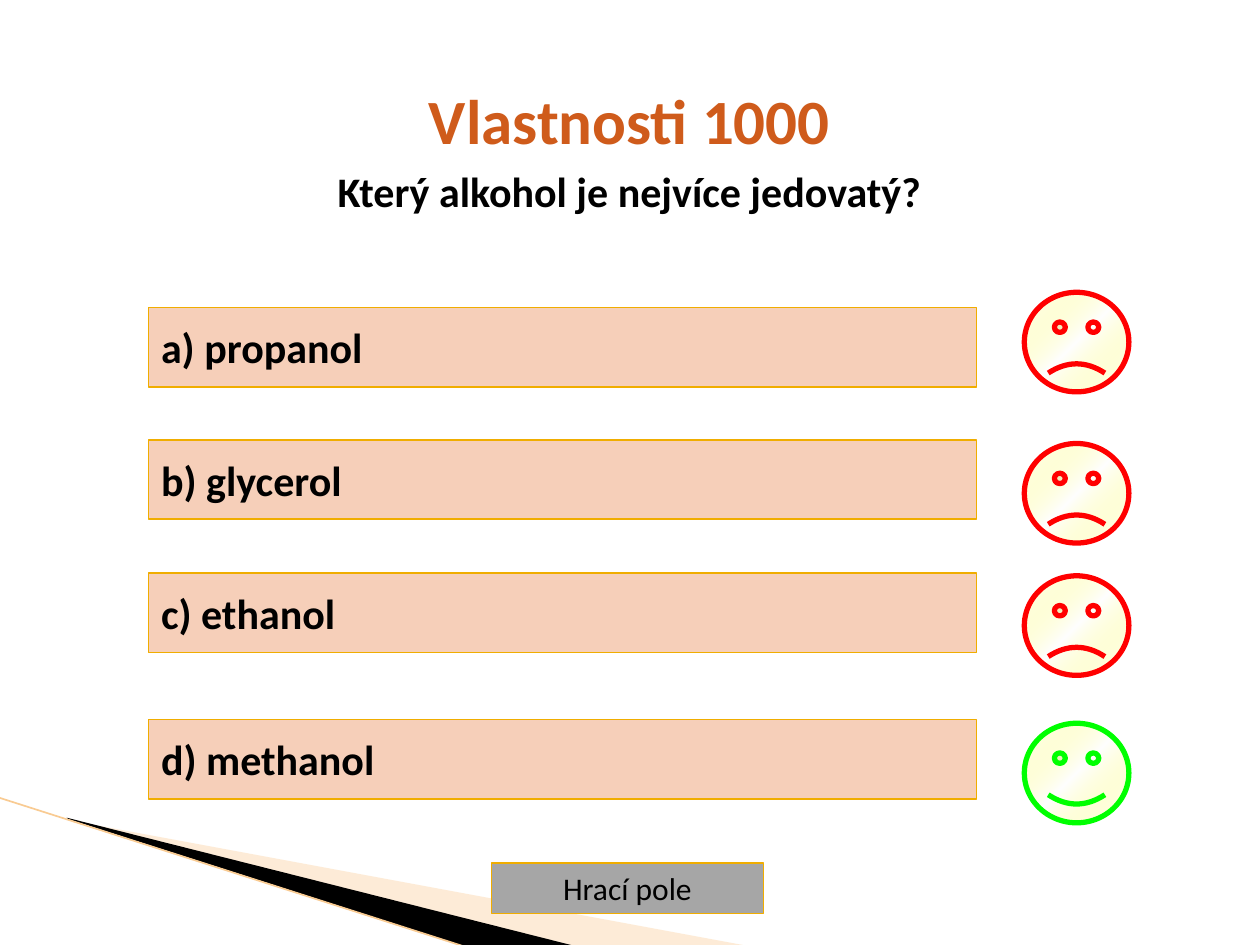
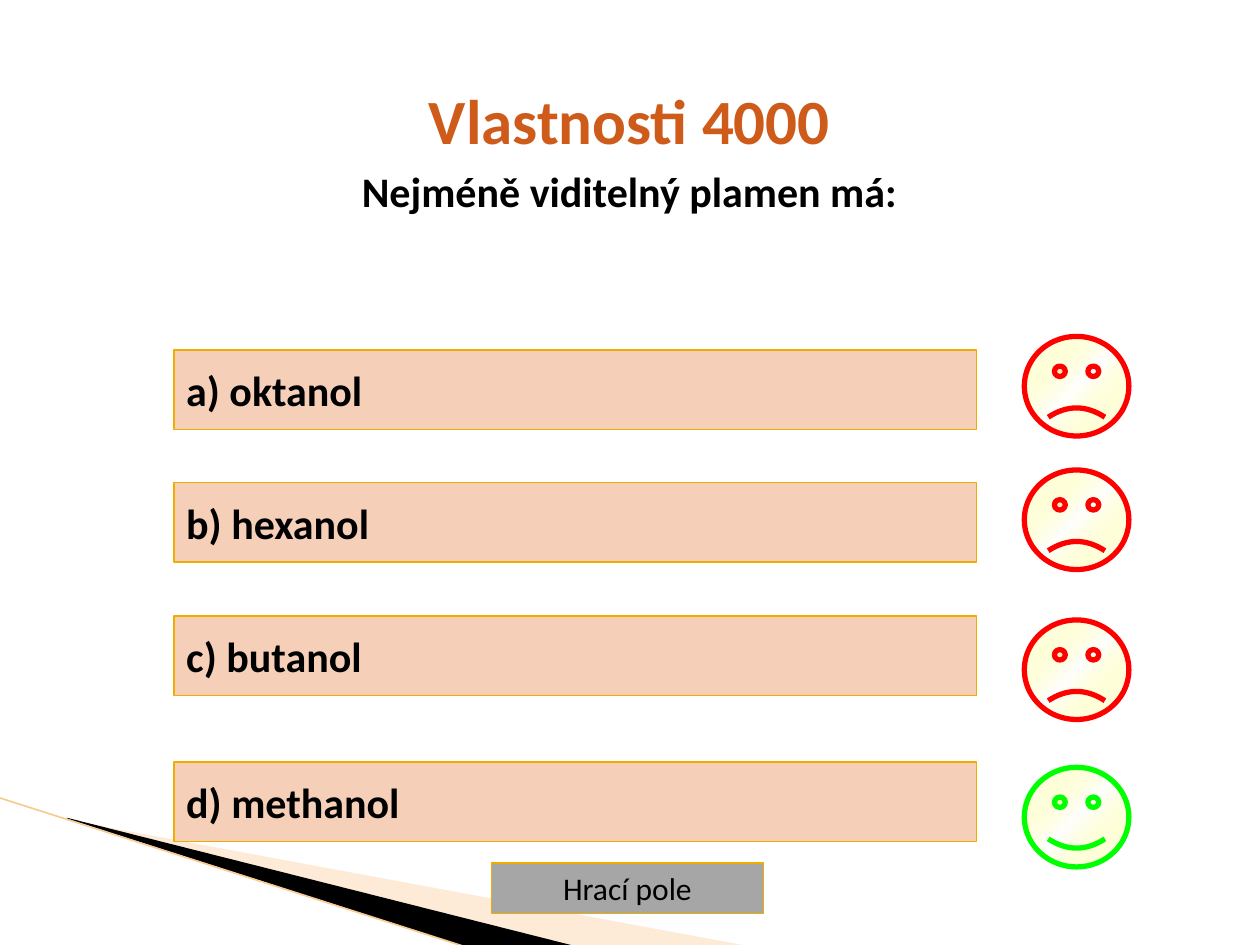
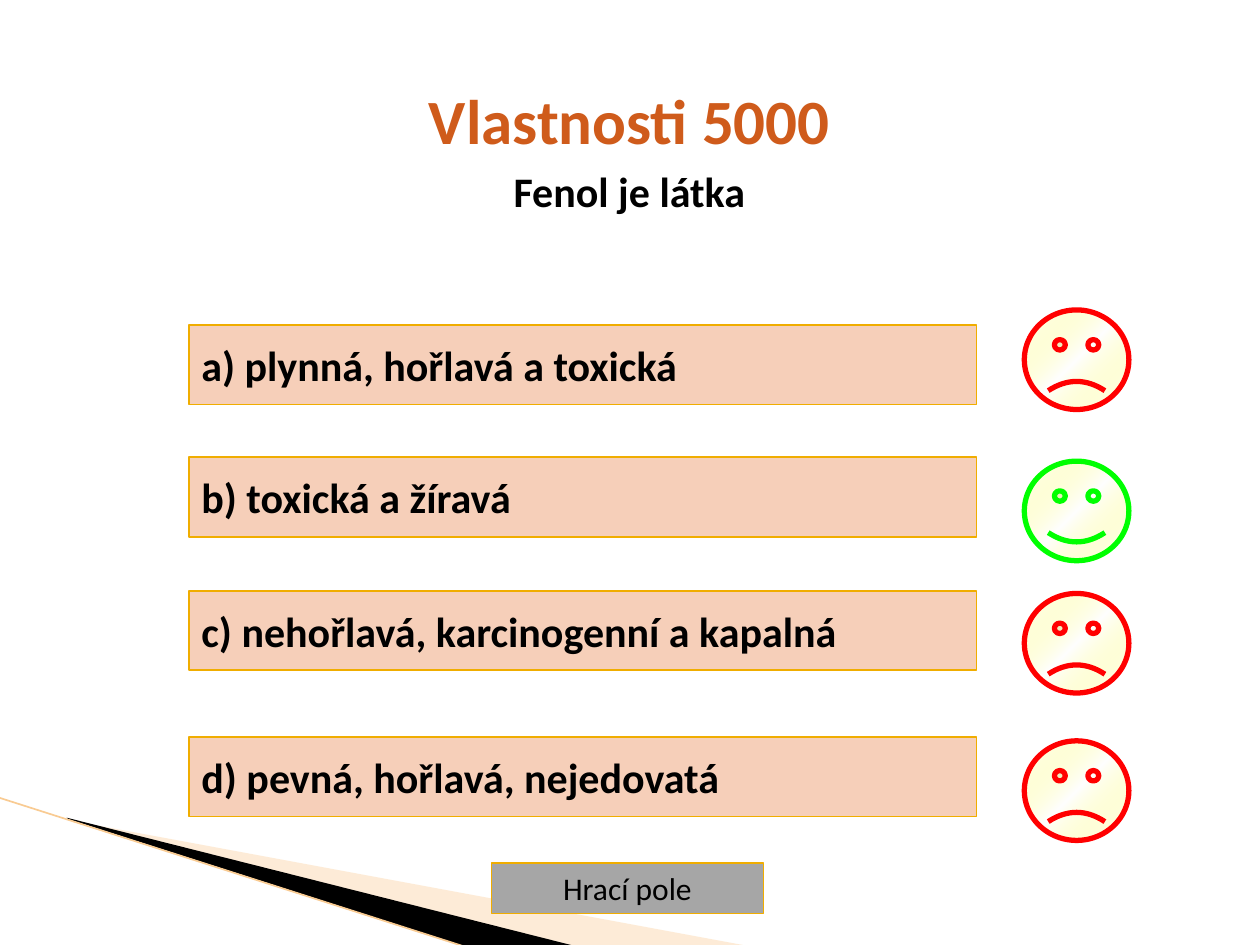
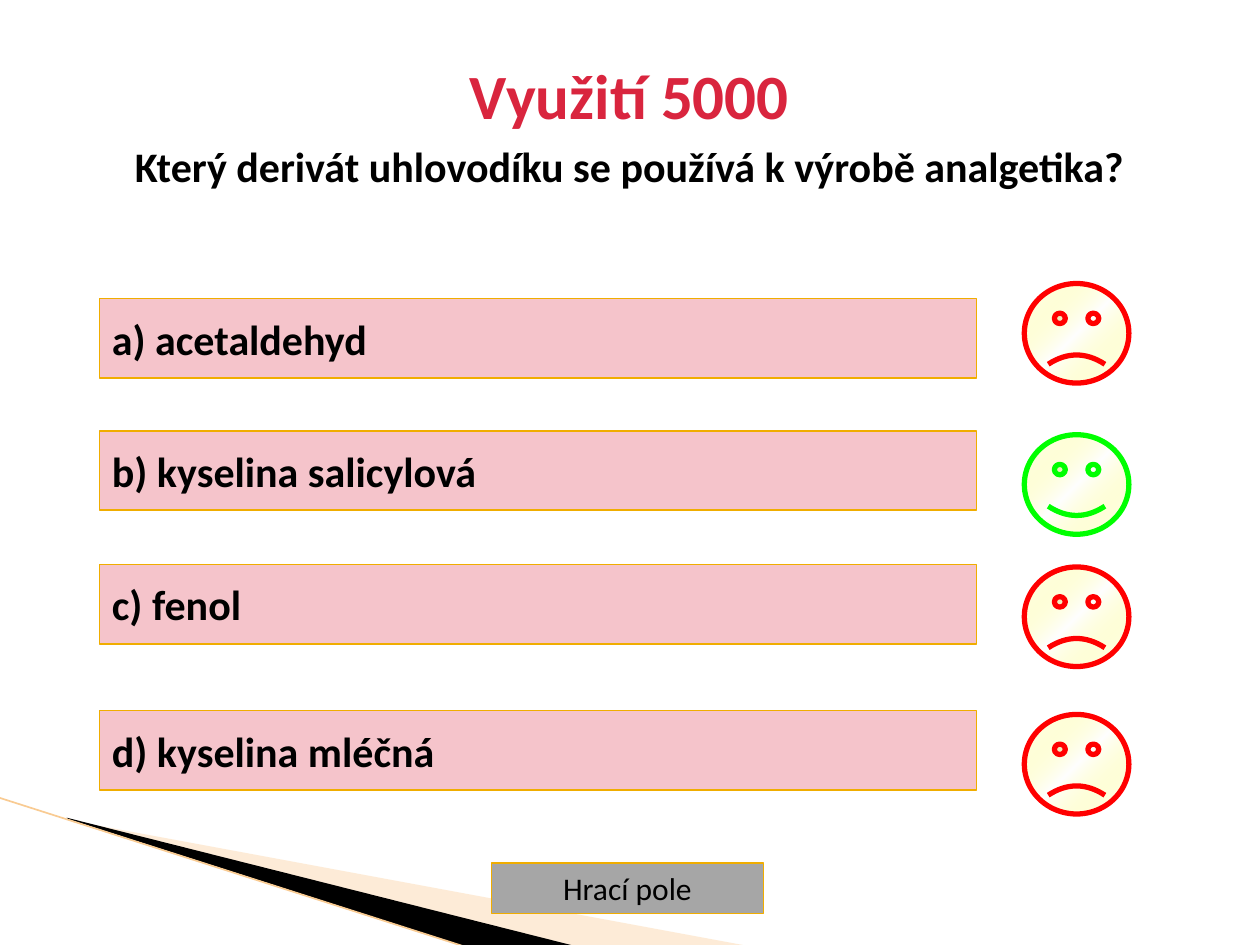
from lxml.etree import SubElement
from pptx import Presentation
from pptx.dml.color import RGBColor
from pptx.enum.shapes import MSO_CONNECTOR, MSO_SHAPE
from pptx.enum.text import MSO_ANCHOR, PP_ALIGN
from pptx.oxml import parse_xml
from pptx.oxml.ns import nsdecls, qn
from pptx.util import Inches, Pt

# Shared look
BLACK, GOLD = "000000", "F0AD00"
RIGHT, WRONG = "00FF00", "FF0000"
ORANGE_THEME = {"heading": "CF5B1B", "answer": "F6CFB9"}
RED_THEME = {"heading": "D9253E", "answer": "F5C4CB"}
HEADING = {"name": "Calibri", "size": Pt(36), "bold": True}
BODY = {"name": "Calibri", "size": Pt(24), "bold": True}
BUTTON = {"name": "Calibri", "size": Pt(18), "bold": False}

# Offsets from the top of the first answer
ANSWER_STEPS = (0, 1.05, 2.11, 3.27)
FACE_STEPS = (-0.12, 1.08, 2.13, 3.3)
ANSWER_RIGHT = 7.75

QUESTIONS = [
    {"heading": "Vlastnosti 1000", "question": "Který alkohol je nejvíce jedovatý?",
     "answers": ["a) propanol", "b) glycerol", "c) ethanol", "d) methanol"],
     "correct": 3, "left": 1.18, "top": 2.44},
    {"heading": "Vlastnosti 4000", "question": "Nejméně viditelný plamen má:",
     "answers": ["a) oktanol", "b) hexanol", "c) butanol", "d) methanol"],
     "correct": 3, "left": 1.38, "top": 2.78, "face_steps": (-0.11, 0.95, 2.14, 3.31)},
    {"heading": "Vlastnosti 5000", "question": "Fenol je látka",
     "answers": ["a) plynná, hořlavá a toxická", "b) toxická a žíravá",
                 "c) nehořlavá, karcinogenní a kapalná", "d) pevná, hořlavá, nejedovatá"],
     "correct": 1, "left": 1.5, "top": 2.58},
    {"heading": "Využití 5000",
     "question": "Který derivát uhlovodíku se používá k výrobě analgetika?",
     "answers": ["a) acetaldehyd", "b) kyselina salicylová", "c) fenol", "d) kyselina mléčná"],
     "correct": 1, "left": 0.79, "top": 2.37, "heading_top": 0.4, "theme": RED_THEME},
]


def rgb(hex_color):
    return RGBColor.from_string(hex_color)


def box(left, top, width, height):
    return [Inches(length) for length in (left, top, width, height)]


def outline(line, color, width):
    line.color.rgb = rgb(color)
    line.width = Pt(width)


def write(paragraph, text, style, color=BLACK, align=PP_ALIGN.LEFT):
    paragraph.alignment = align
    run = paragraph.add_run()
    run.text = text
    for attribute, value in style.items():
        setattr(run.font, attribute, value)
    run.font.color.rgb = rgb(color)


# Corner decoration
def add_wedge(slide, points, color, opacity=100):
    (start, *rest) = [(Inches(x), Inches(y)) for x, y in points]
    builder = slide.shapes.build_freeform(*start)
    builder.add_line_segments(rest, close=True)
    wedge = builder.convert_to_shape()
    wedge.shadow.inherit = False
    wedge.fill.solid()
    wedge.fill.fore_color.rgb = rgb(color)
    wedge.line.fill.background()
    if opacity < 100:
        tint = wedge.fill._xPr.find(".//" + qn("a:srgbClr"))
        SubElement(tint, qn("a:alpha"), val=str(opacity * 1000))


def add_corner(slide):
    add_wedge(slide, [(0.55, 6.51), (5.95, 7.51), (4.56, 7.51), (0.55, 6.5)], "FCCF9B", 40)
    add_wedge(slide, [(0.53, 6.49), (4.57, 7.51), (3.72, 7.52), (0.54, 6.5)], BLACK)
    edge = slide.shapes.add_connector(
        MSO_CONNECTOR.STRAIGHT, *box(-0.01, 6.33, 3.71, 7.52))
    outline(edge.line, "F9CB92", 0.95)
    SubElement(edge._element.spPr, qn("a:effectLst"))


# Quiz elements
def add_button(slide, place, text, fill, style, align=PP_ALIGN.LEFT, border=1):
    button = slide.shapes.add_shape(MSO_SHAPE.ACTION_BUTTON_CUSTOM, *box(*place))
    button.shadow.inherit = False
    button.fill.solid()
    button.fill.fore_color.rgb = rgb(fill)
    outline(button.line, GOLD, border)
    frame = button.text_frame
    frame.word_wrap = False
    frame.vertical_anchor = MSO_ANCHOR.MIDDLE
    write(frame.paragraphs[0], text, style, align=align)


def add_heading(slide, top, heading, question, color):
    frame = slide.shapes.add_textbox(*box(0.39, top, 9.21, 0.75)).text_frame
    frame.word_wrap = True
    write(frame.paragraphs[0], heading, HEADING, color, PP_ALIGN.CENTER)
    prompt = frame.add_paragraph()
    prompt.space_before = Pt(4.8)
    write(prompt, question, BODY, align=PP_ALIGN.CENTER)


def add_face(slide, top, is_correct):
    face = slide.shapes.add_shape(MSO_SHAPE.SMILEY_FACE, *box(8.13, top, 0.83, 0.79))
    face.shadow.inherit = False
    face.adjustments[0] = 0.047 if is_correct else -0.047
    outline(face.line, RIGHT if is_correct else WRONG, 3)
    # Diagonal glow that is clear in the middle
    glow = parse_xml(
        f'<a:gradFill {nsdecls("a")} rotWithShape="1"><a:gsLst>'
        '<a:gs pos="0"><a:srgbClr val="FFFFFF"/></a:gs>'
        '<a:gs pos="50000"><a:srgbClr val="FFFF66"><a:alpha val="0"/></a:srgbClr></a:gs>'
        '<a:gs pos="100000"><a:srgbClr val="FFFFFF"/></a:gs>'
        '</a:gsLst><a:lin ang="2700000" scaled="1"/></a:gradFill>')
    face._element.spPr.find(qn("a:prstGeom")).addnext(glow)


def add_question(deck, quiz):
    slide = deck.slides.add_slide(deck.slide_layouts[6])
    theme = quiz.get("theme", ORANGE_THEME)
    left, top = quiz["left"], quiz["top"]
    add_corner(slide)
    add_button(slide, (3.9, 6.85, 2.16, 0.4), "Hrací pole", "A6A6A6", BUTTON,
               PP_ALIGN.CENTER, 0.75)
    add_heading(slide, quiz.get("heading_top", 0.6), quiz["heading"], quiz["question"],
                theme["heading"])
    for answer, step in zip(quiz["answers"], ANSWER_STEPS):
        place = (left, top + step, ANSWER_RIGHT - left, 0.63)
        add_button(slide, place, answer, theme["answer"], BODY)
    for index, step in enumerate(quiz.get("face_steps", FACE_STEPS)):
        add_face(slide, top + step, index == quiz["correct"])


def main():
    deck = Presentation()
    deck.slide_width, deck.slide_height = Inches(10), Inches(7.5)
    for quiz in QUESTIONS:
        add_question(deck, quiz)
    deck.save("out.pptx")


if __name__ == "__main__":
    main()
